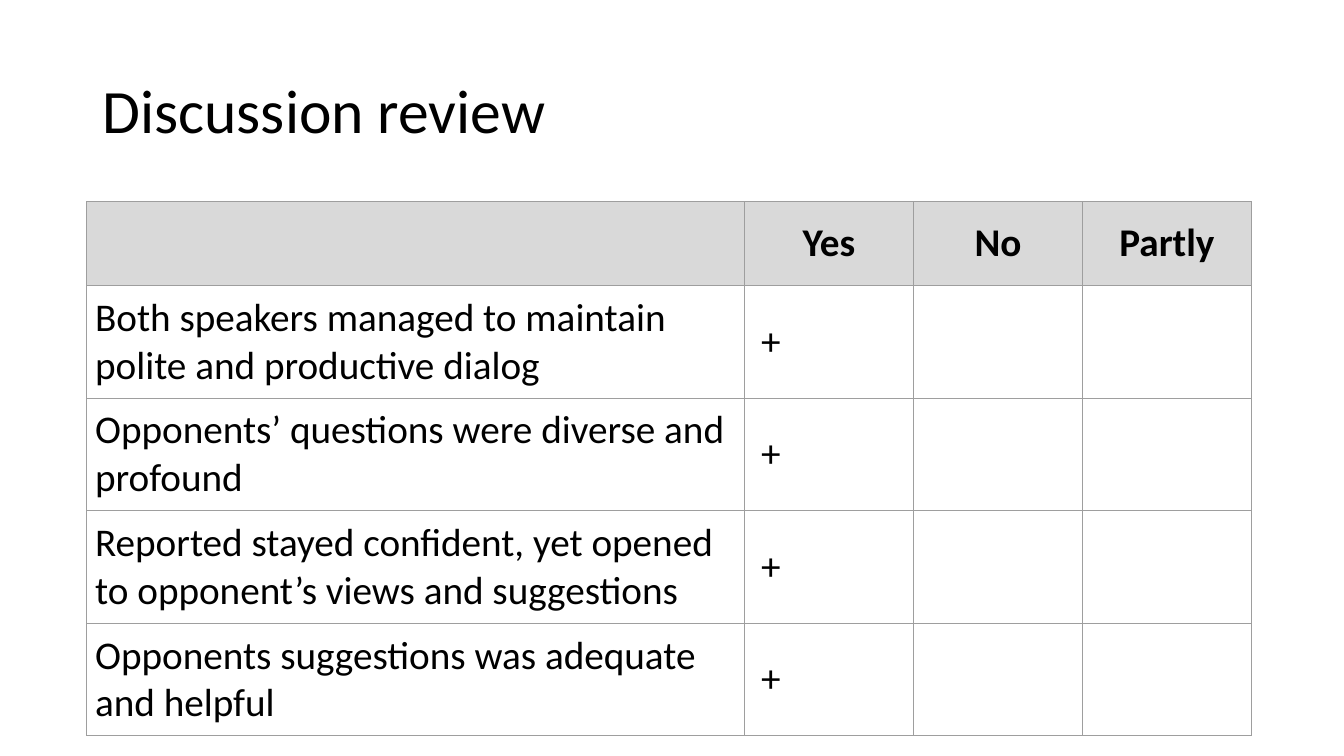
from dataclasses import dataclass

import pptx
import pptx.dml.color
import pptx.enum.text
import pptx.oxml
import pptx.oxml.ns
import pptx.util

Pt = pptx.util.Pt
Align = pptx.enum.text.PP_ALIGN
Anchor = pptx.enum.text.MSO_ANCHOR


@dataclass(frozen=True)
class Theme:
    font: str = "Calibri"
    ink: str = "000000"
    header_fill: str = "D9D9D9"
    border: str = "9E9E9E"
    border_width: float = 0.75
    title_size: int = 44
    table_size: int = 28
    cell_margin: int = 6
    mark_indent: int = 6


THEME = Theme()
ANSWERS = ["Yes", "No", "Partly"]
REVIEW = [
    ("Both speakers managed to maintain polite and productive dialog", "Yes"),
    ("Opponents’ questions were diverse and profound", "Yes"),
    ("Reported stayed confident, yet opened to opponent’s views and suggestions", "Yes"),
    ("Opponents suggestions was adequate and helpful", "Yes"),
]


def write_text(frame, text, size=THEME.table_size, bold=False, align=Align.LEFT, spacing=1.0):
    paragraph = frame.paragraphs[0]
    paragraph.alignment = align
    paragraph.line_spacing = spacing
    run = paragraph.add_run()
    run.text = text
    run.font.name = THEME.font
    run.font.size = Pt(size)
    run.font.bold = bold
    run.font.color.rgb = pptx.dml.color.RGBColor.from_string(THEME.ink)


def add_title(slide, text, left, top, width, height):
    title = slide.shapes.title
    title.left, title.top, title.width, title.height = map(Pt, (left, top, width, height))
    title.text_frame.vertical_anchor = Anchor.MIDDLE
    write_text(title.text_frame, text, size=THEME.title_size, spacing=0.9)


def format_cell(cell, fill=None):
    """Give the cell its margins, four borders and fill."""
    cell.vertical_anchor = Anchor.MIDDLE
    margin = Pt(THEME.cell_margin)
    cell.margin_left = cell.margin_right = cell.margin_top = cell.margin_bottom = margin
    properties = cell._tc.get_or_add_tcPr()
    for side in "LRTB":
        properties.append(pptx.oxml.parse_xml(
            f'<a:ln{side} {pptx.oxml.ns.nsdecls("a")} w="{Pt(THEME.border_width)}">'
            f'<a:solidFill><a:srgbClr val="{THEME.border}"/></a:solidFill></a:ln{side}>'))
    if fill:
        cell.fill.solid()
        cell.fill.fore_color.rgb = pptx.dml.color.RGBColor.from_string(fill)
    else:
        cell.fill.background()


def add_review_table(slide, left, top, width, header_height, row_height, answer_width):
    height = header_height + row_height * len(REVIEW)
    frame = slide.shapes.add_table(len(REVIEW) + 1, len(ANSWERS) + 1,
                                   Pt(left), Pt(top), Pt(width), Pt(height))
    table = frame.table
    table.first_row = table.horz_banding = False
    for index, column in enumerate(table.columns):
        column.width = Pt(answer_width if index else width - answer_width * len(ANSWERS))
    for index, row in enumerate(table.rows):
        row.height = Pt(row_height if index else header_height)
        for cell in row.cells:
            format_cell(cell, fill=None if index else THEME.header_fill)

    for column, answer in enumerate(ANSWERS, start=1):
        write_text(table.cell(0, column).text_frame, answer, bold=True, align=Align.CENTER)
    for row, (statement, answer) in enumerate(REVIEW, start=1):
        write_text(table.cell(row, 0).text_frame, statement)
        mark = table.cell(row, ANSWERS.index(answer) + 1)
        mark.margin_left = Pt(THEME.cell_margin + THEME.mark_indent)
        write_text(mark.text_frame, "+")


def main():
    presentation = pptx.Presentation()
    presentation.slide_width, presentation.slide_height = Pt(960), Pt(540)
    slide = presentation.slides.add_slide(presentation.slide_layouts.get_by_name("Title Only"))
    add_title(slide, "Discussion review", left=66, top=28.75, width=828, height=104.5)
    add_review_table(slide, left=62, top=144, width=832,
                     header_height=60, row_height=80, answer_width=120.75)
    presentation.save("out.pptx")


if __name__ == "__main__":
    main()
